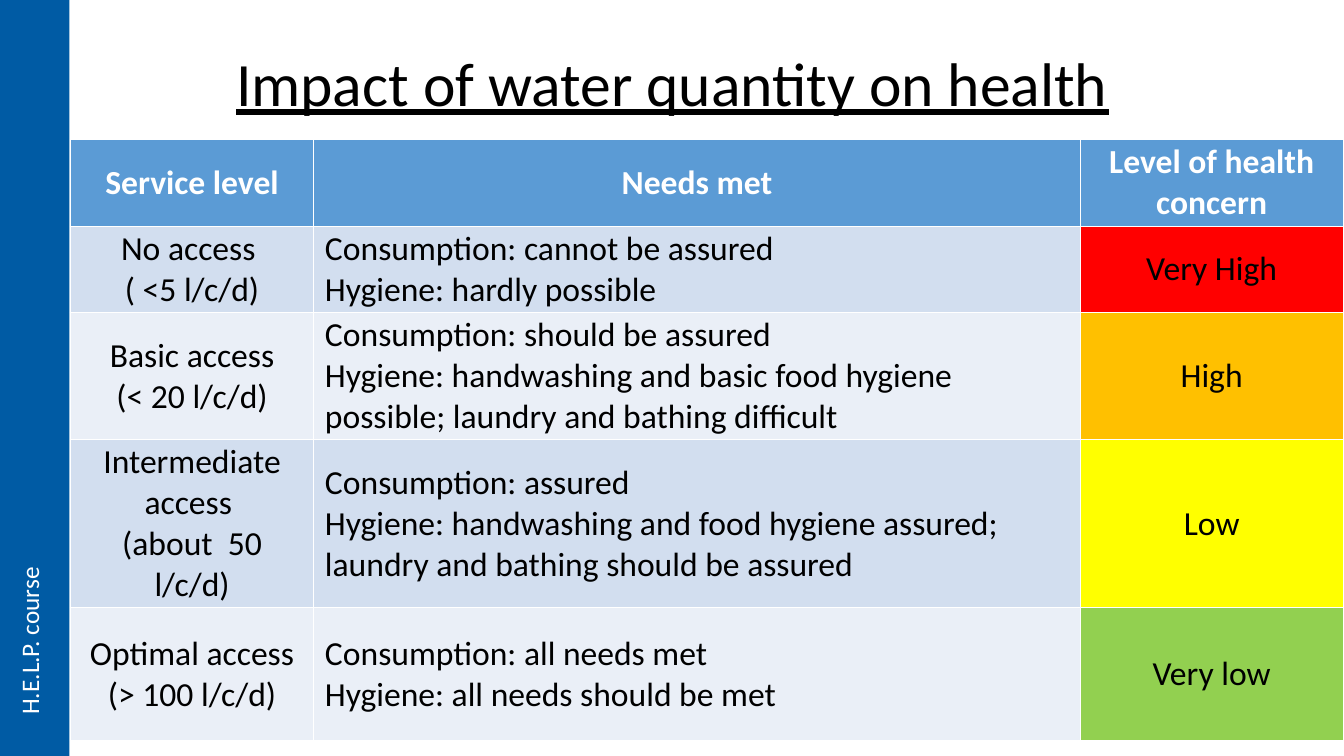
from pptx import Presentation
from pptx.dml.color import RGBColor
from pptx.enum.shapes import MSO_SHAPE
from pptx.enum.text import MSO_ANCHOR, PP_ALIGN
from pptx.util import Cm, Pt

COLORS = {
    "white": "FFFFFF", "black": "000000", "sidebar": "005BA4",
    "header": "5B9BD5", "band_dark": "D2DEEF", "band_light": "EAEFF7",
    "very_high": "FF0000", "high": "FFC000", "low": "FFFF00", "very_low": "92D050",
}
HEADERS = ["Service level", "Needs met", "Level of health concern"]
LEVELS = [
    ("No access \n( <5 l/c/d)",
     "Consumption: cannot be assured\nHygiene: hardly possible",
     "Very High", "very_high"),
    ("Basic access\n(< 20 l/c/d)",
     "Consumption: should be assured\nHygiene: handwashing and basic food hygiene "
     "possible; laundry and bathing difficult",
     "High", "high"),
    ("Intermediate access \n(about  50 l/c/d)",
     "Consumption: assured\nHygiene: handwashing and food hygiene assured; "
     "laundry and bathing should be assured",
     "Low", "low"),
    ("Optimal access\n(> 100 l/c/d)",
     "Consumption: all needs met\nHygiene: all needs should be met",
     "Very low", "very_low"),
]
COLUMN_WIDTHS = [6.14, 19.31, 6.63]
ROW_HEIGHTS = [2.18, 2.18, 3.02, 3.33, 3.35]


def rgb(name):
    return RGBColor.from_string(COLORS[name])


def format_text(tf, size, color, align, bold=False, underline=False):
    for p in tf.paragraphs:
        p.alignment = align
        for r in p.runs:
            r.font.name = "Calibri"
            r.font.size = Pt(size)
            r.font.bold = bold
            r.font.underline = underline
            r.font.color.rgb = rgb(color)


def add_sidebar(s, left, top, width, height):
    bar = s.shapes.add_shape(MSO_SHAPE.RECTANGLE, Cm(left), Cm(top), Cm(width), Cm(height))
    bar.shadow.inherit = False
    bar.fill.solid()
    bar.fill.fore_color.rgb = rgb("sidebar")
    bar.line.fill.background()
    label = s.shapes.add_textbox(Cm(left + 0.23), Cm(top + height - 4.8), Cm(1.27), Cm(4.01))
    tf = label.text_frame
    tf.word_wrap = False
    label.element.txBody.bodyPr.set("vert", "vert270")
    tf.text = "H.E.L.P. course"
    format_text(tf, 18, "white", PP_ALIGN.LEFT)


def add_title(s, left, top, width, height):
    sp = s.shapes.title
    sp.left, sp.top, sp.width, sp.height = Cm(left), Cm(top), Cm(width), Cm(height)
    tf = sp.text_frame
    tf.text = "Impact of water quantity on health"
    tf.vertical_anchor = MSO_ANCHOR.MIDDLE
    tf.paragraphs[0].line_spacing = 0.9
    format_text(tf, 44, "black", PP_ALIGN.CENTER, underline=True)


def fill_cell(cell, text, fill, color, align, bold):
    cell.fill.solid()
    cell.fill.fore_color.rgb = rgb(fill)
    cell.vertical_anchor = MSO_ANCHOR.MIDDLE
    cell.margin_left = cell.margin_right = Cm(0.28)
    cell.margin_top = cell.margin_bottom = Cm(0.05)
    cell.text_frame.text = text
    format_text(cell.text_frame, 24, color, align, bold)


def add_levels_table(s, left, top, width, height):
    table = s.shapes.add_table(len(LEVELS) + 1, len(HEADERS),
                               Cm(left), Cm(top), Cm(width), Cm(height)).table
    for column, share in zip(table.columns, COLUMN_WIDTHS):
        column.width = Cm(width * share / sum(COLUMN_WIDTHS))
    for row, share in zip(table.rows, ROW_HEIGHTS):
        row.height = Cm(height * share / sum(ROW_HEIGHTS))
    for j, header in enumerate(HEADERS):
        fill_cell(table.cell(0, j), header, "header", "white", PP_ALIGN.CENTER, True)
    for i, (service, needs, concern, concern_fill) in enumerate(LEVELS, 1):
        band = "band_dark" if i % 2 else "band_light"
        cells = [(service, band, PP_ALIGN.CENTER),
                 (needs, band, PP_ALIGN.LEFT),
                 (concern, concern_fill, PP_ALIGN.CENTER)]
        for j, (text, fill, align) in enumerate(cells):
            fill_cell(table.cell(i, j), text, fill, "black", align, False)


def main():
    prs = Presentation()
    prs.slide_width, prs.slide_height = Cm(33.87), Cm(19.05)
    s = prs.slides.add_slide(prs.slide_layouts[5])
    add_sidebar(s, 0, 0, 1.75, 19.05)
    add_levels_table(s, 1.77, 3.52, 32.08, 14.06)
    add_title(s, 2.34, 1.02, 29.21, 2.31)
    prs.save("out.pptx")


if __name__ == "__main__":
    main()
